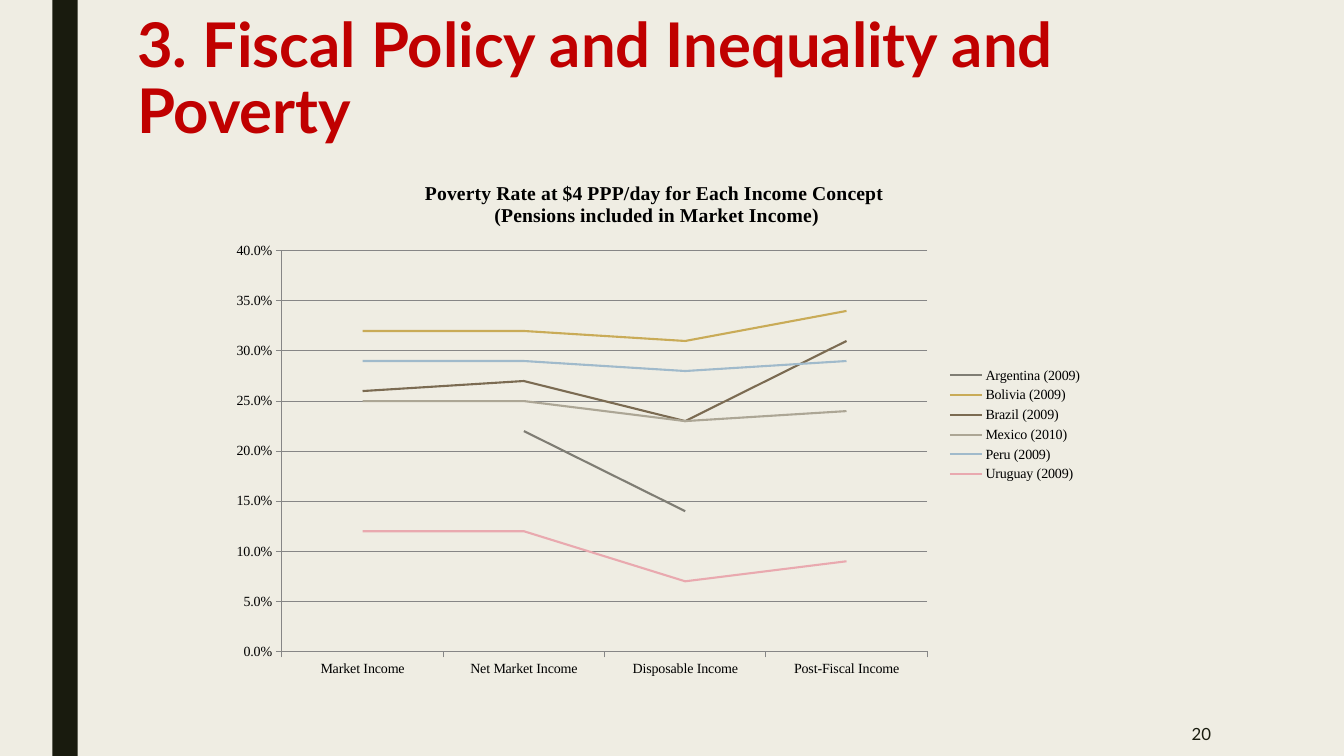
"""Build the slide on poverty rates by income concept."""
import dataclasses
import typing

import lxml.etree
import pptx
import pptx.chart.data
import pptx.dml.color
import pptx.enum.chart
import pptx.enum.shapes
import pptx.enum.text
import pptx.util

Inches = pptx.util.Inches
Pt = pptx.util.Pt
RGB = pptx.dml.color.RGBColor.from_string


@dataclasses.dataclass(frozen=True)
class Theme:
    background: str = "EFEDE3"
    dark: str = "191B0E"
    title: str = "C00000"
    black: str = "000000"
    grid: str = "868686"
    heading_font: str = "Lato"
    chart_font: str = "Times New Roman"
    title_size: int = 44
    number_size: int = 12
    chart_title_size: int = 14
    chart_size: int = 10
    line_width: float = 1.5
    axis_width: float = 0.75


class Box(typing.NamedTuple):
    left: float
    top: float
    width: float
    height: float

    def emu(self) -> list[int]:
        return [Inches(v) for v in self]


class Country(typing.NamedTuple):
    name: str
    color: str
    rates: tuple[float | None, ...]


THEME = Theme()
BAR = Box(0.52, 0, 0.25, 7.5)
TITLE = Box(1.26, 0.1, 10.5, 1.62)
NUMBER = Box(10.36, 7.06, 1.75, 0.44)
CHART = Box(2.19, 1.6, 8.65, 5.23)
PLOT = {"x": 0.07, "y": 0.17, "w": 0.74, "h": 0.76}
CHART_TITLE = ("Poverty Rate at $4 PPP/day for Each Income Concept ",
               "(Pensions included in Market Income)")
CONCEPTS = ("Market Income", "Net Market Income", "Disposable Income", "Post-Fiscal Income")
COUNTRIES = (
    Country("Argentina (2009)", "7F7D74", (None, 0.22, 0.14, None)),
    Country("Bolivia (2009)", "C9AB57", (0.32, 0.32, 0.31, 0.34)),
    Country("Brazil (2009)", "7B6B52", (0.26, 0.27, 0.23, 0.31)),
    Country("Mexico (2010)", "ACA695", (0.25, 0.25, 0.23, 0.24)),
    Country("Peru (2009)", "A0BACB", (0.29, 0.29, 0.28, 0.29)),
    Country("Uruguay (2009)", "E9A9AF", (0.12, 0.12, 0.07, 0.09)),
)


def set_all(target: typing.Any, values: dict[str, typing.Any]) -> None:
    for name, value in values.items():
        setattr(target, name, value)


def style_font(font: typing.Any, name: str, size: int, color: str, bold: bool = False) -> None:
    set_all(font, {"name": name, "size": Pt(size), "bold": bold})
    font.color.rgb = RGB(color)


def style_line(line: typing.Any, color: str, width: float) -> None:
    line.color.rgb = RGB(color)
    line.width = Pt(width)


def add_bar(slide: typing.Any) -> None:
    sp = slide.shapes.add_shape(pptx.enum.shapes.MSO_SHAPE.RECTANGLE, *BAR.emu())
    sp.shadow.inherit = False
    sp.fill.solid()
    sp.fill.fore_color.rgb = RGB(THEME.dark)
    sp.line.fill.background()


def add_title(slide: typing.Any) -> None:
    sp = slide.shapes.title
    set_all(sp, dict(zip(("left", "top", "width", "height"), TITLE.emu())))
    tf = sp.text_frame
    set_all(tf, {"word_wrap": True, "vertical_anchor": pptx.enum.text.MSO_ANCHOR.TOP,
                 "auto_size": pptx.enum.text.MSO_AUTO_SIZE.NONE})
    p = tf.paragraphs[0]
    set_all(p, {"alignment": pptx.enum.text.PP_ALIGN.LEFT, "line_spacing": 0.89})
    r = p.add_run()
    r.text = "3. Fiscal Policy and Inequality and Poverty"
    style_font(r.font, THEME.heading_font, THEME.title_size, THEME.title, True)


def add_number(slide: typing.Any) -> None:
    tf = slide.shapes.add_textbox(*NUMBER.emu()).text_frame
    set_all(tf, {"word_wrap": True, "vertical_anchor": pptx.enum.text.MSO_ANCHOR.MIDDLE})
    p = tf.paragraphs[0]
    p.alignment = pptx.enum.text.PP_ALIGN.RIGHT
    r = p.add_run()
    r.text = "20"
    style_font(r.font, THEME.heading_font, THEME.number_size, THEME.dark)


def place_plot(chart: typing.Any) -> None:
    area = chart.plots[0]._element.getparent()
    ns = area.nsmap["c"]
    for old in area.findall(f"{{{ns}}}layout"):
        area.remove(old)
    layout = lxml.etree.Element(f"{{{ns}}}layout")
    manual = lxml.etree.SubElement(layout, f"{{{ns}}}manualLayout")
    settings = {"layoutTarget": "inner", "xMode": "edge", "yMode": "edge", **PLOT}
    for tag, value in settings.items():
        lxml.etree.SubElement(manual, f"{{{ns}}}{tag}", val=str(value))
    area.insert(0, layout)


def add_chart(slide: typing.Any) -> None:
    enums = pptx.enum.chart
    data = pptx.chart.data.CategoryChartData(number_format="0.0%")
    data.categories = CONCEPTS
    for country in COUNTRIES:
        data.add_series(country.name, country.rates)
    chart = slide.shapes.add_chart(enums.XL_CHART_TYPE.LINE, *CHART.emu(), data).chart
    style_font(chart.font, THEME.chart_font, THEME.chart_size, THEME.black)

    tf = chart.chart_title.text_frame
    for i, text in enumerate(CHART_TITLE):
        p = tf.add_paragraph() if i else tf.paragraphs[0]
        r = p.add_run()
        r.text = text
        style_font(r.font, THEME.chart_font, THEME.chart_title_size, THEME.black, True)
    chart.chart_title.include_in_layout = False

    chart.has_legend = True
    set_all(chart.legend, {"position": enums.XL_LEGEND_POSITION.RIGHT,
                           "include_in_layout": False})
    for axis in (chart.category_axis, chart.value_axis):
        set_all(axis, {"major_tick_mark": enums.XL_TICK_MARK.OUTSIDE,
                       "minor_tick_mark": enums.XL_TICK_MARK.NONE})
        style_line(axis.format.line, THEME.grid, THEME.axis_width)
    chart.category_axis.tick_label_position = enums.XL_TICK_LABEL_POSITION.LOW
    axis = chart.value_axis
    set_all(axis, {"minimum_scale": 0, "maximum_scale": 0.4, "major_unit": 0.05,
                   "has_major_gridlines": True})
    set_all(axis.tick_labels, {"number_format": "0.0%", "number_format_is_linked": False})
    style_line(axis.major_gridlines.format.line, THEME.grid, THEME.axis_width)

    chart.plots[0].vary_by_categories = False
    for series, country in zip(chart.plots[0].series, COUNTRIES):
        series.smooth = False
        series.marker.style = enums.XL_MARKER_STYLE.NONE
        style_line(series.format.line, country.color, THEME.line_width)
    place_plot(chart)


def main() -> None:
    prs = pptx.Presentation()
    set_all(prs, {"slide_width": Inches(13.33), "slide_height": Inches(7.5)})
    slide = prs.slides.add_slide(prs.slide_layouts.get_by_name("Title Only"))
    slide.background.fill.solid()
    slide.background.fill.fore_color.rgb = RGB(THEME.background)
    add_bar(slide)
    add_title(slide)
    add_number(slide)
    add_chart(slide)
    prs.save("out.pptx")


if __name__ == "__main__":
    main()
